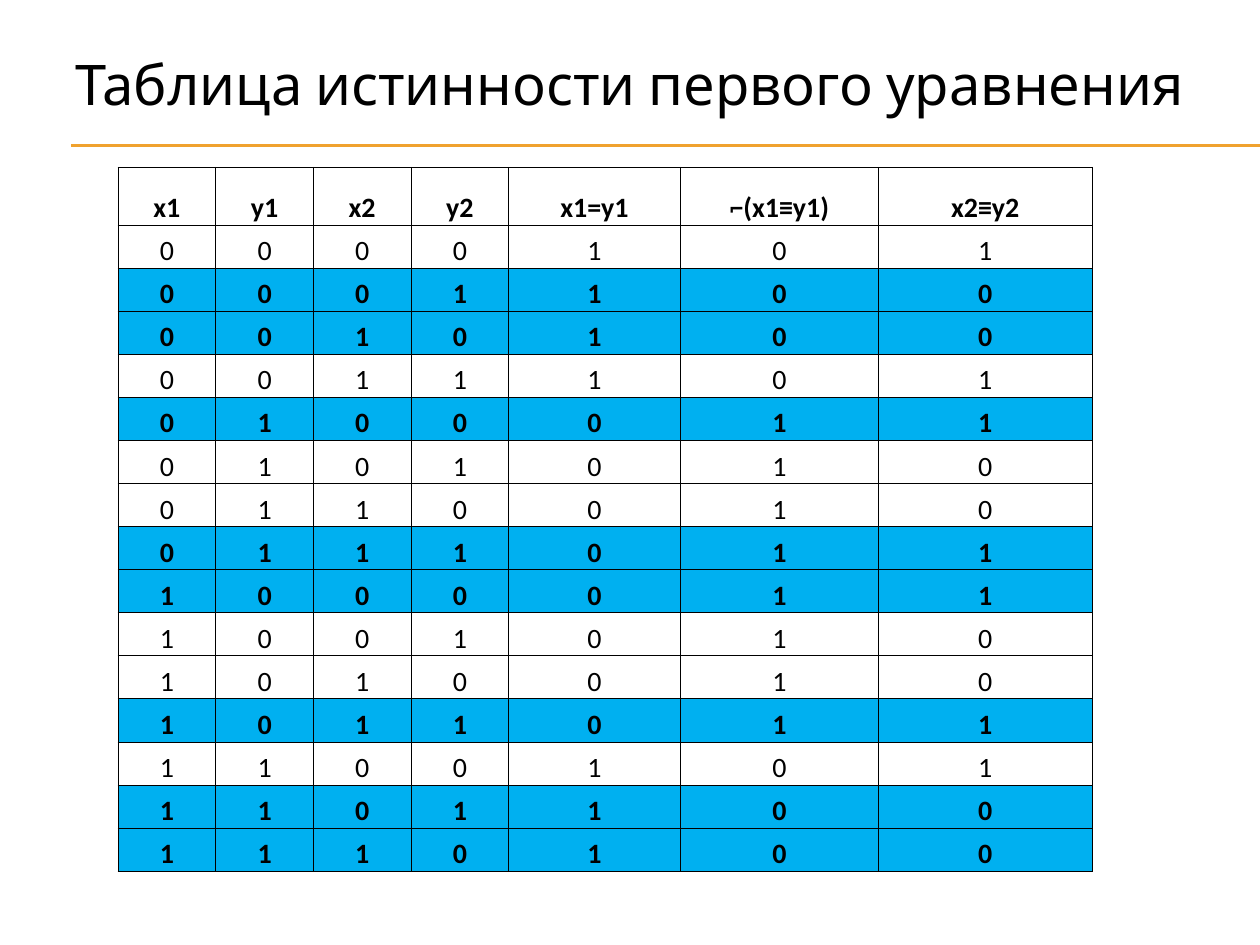
from itertools import product

from lxml import etree
from pptx import Presentation
from pptx.dml.color import RGBColor
from pptx.enum.shapes import MSO_CONNECTOR
from pptx.enum.text import MSO_ANCHOR, PP_ALIGN
from pptx.oxml.ns import qn
from pptx.util import Pt

STRAIGHT = MSO_CONNECTOR.STRAIGHT
CENTER = PP_ALIGN.CENTER
MIDDLE, BOTTOM = MSO_ANCHOR.MIDDLE, MSO_ANCHOR.BOTTOM
TITLE_ONLY = 5

TITLE = "Таблица истинности первого уравнения"
HEADINGS = ["x1", "y1", "x2", "y2", "x1=y1", "⌐(x1≡y1)", "x2≡y2"]
COLUMN_WIDTHS = [55.8] * 4 + [98.2, 113, 122.4]
HEADING_HEIGHT, ROW_HEIGHT = 33.1, 24.62


def color(hex_code):
    return RGBColor.from_string(hex_code)


def write(frame, text, size, font, bold=False, ink="000000", align=CENTER):
    """Put one formatted paragraph into a text frame."""
    paragraph = frame.paragraphs[0]
    paragraph.alignment = align
    run = paragraph.add_run()
    run.text = text
    run.font.size = Pt(size)
    run.font.name = font
    run.font.bold = bold
    run.font.color.rgb = color(ink)


def truth_rows():
    """Yield the values of each row and whether the equation holds in it."""
    for x1, y1, x2, y2 in list(product((0, 1), repeat=4))[:-1]:
        first, second = int(x1 == y1), int(x2 == y2)
        yield [x1, y1, x2, y2, first, 1 - first, second], first != second


class SlideBuilder:
    title_font, table_font = "Cabin", "Calibri"
    rule_color, border_color, highlight = "F0A22E", "000000", "00B0F0"

    def __init__(self, slide):
        self.slide = slide

    def title(self, text, left, top, width, height):
        title = self.slide.shapes.title
        title.left, title.top = Pt(left), Pt(top)
        title.width, title.height = Pt(width), Pt(height)
        frame = title.text_frame
        frame.margin_left = frame.margin_right = 0
        frame.vertical_anchor = MIDDLE
        frame.word_wrap = True
        write(frame, text, 32, self.title_font)

    def rule(self, left, right, y):
        line = self.slide.shapes.add_connector(STRAIGHT, Pt(left), Pt(y), Pt(right), Pt(y))
        line.line.color.rgb = color(self.rule_color)
        line.line.width = Pt(0.75)
        etree.SubElement(line._element.spPr, qn("a:effectLst"))

    def table(self, left, top, headings, rows):
        rows = [(headings, False)] + list(rows)
        heights = [HEADING_HEIGHT] + [ROW_HEIGHT] * (len(rows) - 1)
        table = self.slide.shapes.add_table(
            len(rows), len(headings), Pt(left), Pt(top),
            Pt(sum(COLUMN_WIDTHS)), Pt(sum(heights))).table
        table.horz_banding = False
        for column, width in zip(table.columns, COLUMN_WIDTHS):
            column.width = Pt(width)
        for index, (values, solves) in enumerate(rows):
            table.rows[index].height = Pt(heights[index])
            for cell, value in zip(table.rows[index].cells, values):
                self.cell(cell, str(value), index == 0 or solves, solves)

    def cell(self, cell, text, bold, highlighted):
        cell.margin_left = cell.margin_right = cell.margin_top = Pt(0.7)
        cell.margin_bottom = 0
        cell.vertical_anchor = BOTTOM
        write(cell.text_frame, text, 16, self.table_font, bold)
        self.borders(cell)
        if highlighted:
            cell.fill.solid()
            cell.fill.fore_color.rgb = color(self.highlight)
        else:
            cell.fill.background()

    def borders(self, cell):
        properties = cell._tc.get_or_add_tcPr()
        for side in ("a:lnL", "a:lnR", "a:lnT", "a:lnB"):
            edge = etree.SubElement(properties, qn(side), w=str(Pt(0.5)))
            fill = etree.SubElement(edge, qn("a:solidFill"))
            etree.SubElement(fill, qn("a:srgbClr"), val=self.border_color)


def main():
    deck = Presentation()
    deck.slide_width, deck.slide_height = Pt(720), Pt(540)
    builder = SlideBuilder(deck.slides.add_slide(deck.slide_layouts[TITLE_ONLY]))
    for y in (82.8, 83.5):
        builder.rule(40.5, 720, y)
    builder.table(67.5, 95.6, HEADINGS, truth_rows())
    builder.title(TITLE, 36, 21.6, 648, 52)
    deck.save("out.pptx")


if __name__ == "__main__":
    main()
